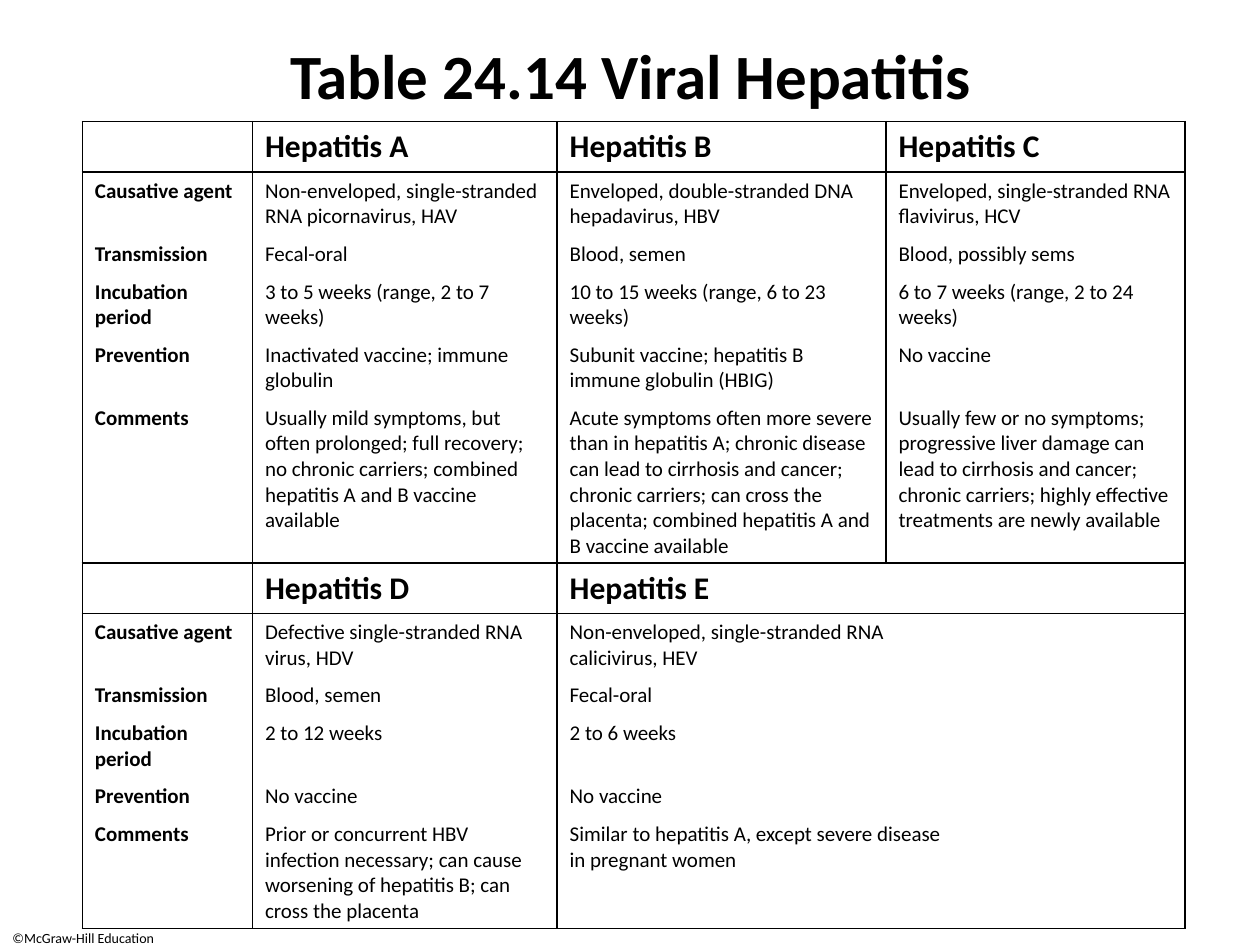
from lxml import etree
from pptx import Presentation, util as u
from pptx.dml.color import RGBColor
from pptx.enum import text
from pptx.oxml import ns

BLACK = RGBColor(0, 0, 0)
WHITE = RGBColor(255, 255, 255)
FONT = "Calibri"
LABELS = ["Causative agent", "Transmission", "Incubation period", "Prevention", "Comments"]

HEPATITIS_A = [
    "Hepatitis A",
    "Non-enveloped, single-stranded RNA picornavirus, HAV",
    "Fecal-oral",
    "3 to 5 weeks (range, 2 to 7 weeks)",
    "Inactivated vaccine; immune globulin",
    "Usually mild symptoms, but often prolonged; full recovery; no chronic carriers; "
    "combined hepatitis A and B vaccine available",
]
HEPATITIS_B = [
    "Hepatitis B",
    "Enveloped, double-stranded DNA hepadavirus, HBV",
    "Blood, semen",
    "10 to 15 weeks (range, 6 to 23 weeks)",
    "Subunit vaccine; hepatitis B immune globulin (HBIG)",
    "Acute symptoms often more severe than in hepatitis A; chronic disease can lead to "
    "cirrhosis and cancer; chronic carriers; can cross the placenta; combined hepatitis A "
    "and B vaccine available",
]
HEPATITIS_C = [
    "Hepatitis C",
    "Enveloped, single-stranded RNA flavivirus, HCV",
    "Blood, possibly sems",
    "6 to 7 weeks (range, 2 to 24 weeks)",
    "No vaccine",
    "Usually few or no symptoms; progressive liver damage can lead to cirrhosis and cancer; "
    "chronic carriers; highly effective treatments are newly available",
]
HEPATITIS_D = [
    "Hepatitis D",
    "Defective single-stranded RNA virus, HDV",
    "Blood, semen",
    "2 to 12 weeks",
    "No vaccine",
    "Prior or concurrent HBV infection necessary; can cause worsening of hepatitis B; "
    "can cross the placenta",
]
HEPATITIS_E = [
    "Hepatitis E",
    "Non-enveloped, single-stranded RNA\ncalicivirus, HEV",
    "Fecal-oral",
    "2 to 6 weeks",
    "No vaccine",
    "Similar to hepatitis A, except severe disease\nin pregnant women",
]


def set_values(target, values):
    """Set each named attribute of the target."""
    for name, value in values.items():
        setattr(target, name, value)


def write_text(frame, wording, size, bold, align=text.PP_ALIGN.LEFT):
    """Fill a text frame, one paragraph for each line of wording."""
    frame.text = wording
    for para in frame.paragraphs:
        para.alignment = align
        set_values(para.font, {"name": FONT, "size": u.Pt(size), "bold": bold})
        para.font.color.rgb = BLACK


def add_label(page, box, wording, size, bold, align, frame_values):
    """Place a text box with one style of text."""
    frame = page.shapes.add_textbox(*map(u.Cm, box)).text_frame
    set_values(frame, {"word_wrap": True, **frame_values})
    write_text(frame, wording, size, bold, align)


def set_borders(cell, visible):
    """Draw the visible sides of a cell in black and hide the others."""
    properties = cell._tc.get_or_add_tcPr()
    for index, side in enumerate("LRTB"):
        line = etree.Element(ns.qn(f"a:ln{side}"), w=str(u.Pt(1)))
        if side in visible:
            fill = etree.SubElement(line, ns.qn("a:solidFill"))
            etree.SubElement(fill, ns.qn("a:srgbClr"), val=str(BLACK))
        else:
            etree.SubElement(line, ns.qn("a:noFill"))
        properties.insert(index, line)


def add_disease_table(page, box, widths, heights, diseases):
    """Place a table with a label column and one column for each disease."""
    columns = [["", *LABELS], *diseases]
    table = page.shapes.add_table(len(heights), len(widths), *map(u.Cm, box)).table
    set_values(table, {"first_row": False, "horz_banding": False})
    for row, height in zip(table.rows, heights):
        row.height = u.Cm(height)
    sides = ["LRTB", "LRT", "LR", "LR", "LR", "LRB"]
    for c, (width, entries) in enumerate(zip(widths, columns)):
        table.columns[c].width = u.Cm(width)
        for r, wording in enumerate(entries):
            cell = table.cell(r, c)
            write_text(cell.text_frame, wording, 12 if r else 18, r == 0 or c == 0)
            cell.fill.background()
            set_borders(cell, sides[r])


def main():
    """Build the slide and save the deck."""
    deck = Presentation()
    set_values(deck, {"slide_width": u.Cm(25.4), "slide_height": u.Cm(19.05)})
    page = deck.slides.add_slide(deck.slide_layouts[6])
    page.background.fill.solid()
    page.background.fill.fore_color.rgb = WHITE
    add_label(page, (0, 18.62, 3.81, 0.43), "©McGraw-Hill Education", 8, False,
              text.PP_ALIGN.LEFT, {"vertical_anchor": text.MSO_ANCHOR.TOP})
    add_label(page, (4.83, 0.64, 15.77, 1.7), "Table 24.14 Viral Hepatitis", 36, True,
              text.PP_ALIGN.CENTER, {"vertical_anchor": text.MSO_ANCHOR.MIDDLE})
    add_disease_table(page, (1.66, 2.45, 22.23, 8.68), (3.43, 6.14, 6.63, 6.03),
                      (0.99, 1.24, 0.74, 1.24, 1.24, 3.23),
                      [HEPATITIS_A, HEPATITIS_B, HEPATITIS_C])
    add_disease_table(page, (1.66, 11.35, 22.23, 6.87), (3.43, 6.14, 12.66),
                      (0.94, 1.19, 0.71, 1.19, 0.71, 2.13),
                      [HEPATITIS_D, HEPATITIS_E])
    deck.save("out.pptx")


if __name__ == "__main__":
    main()
